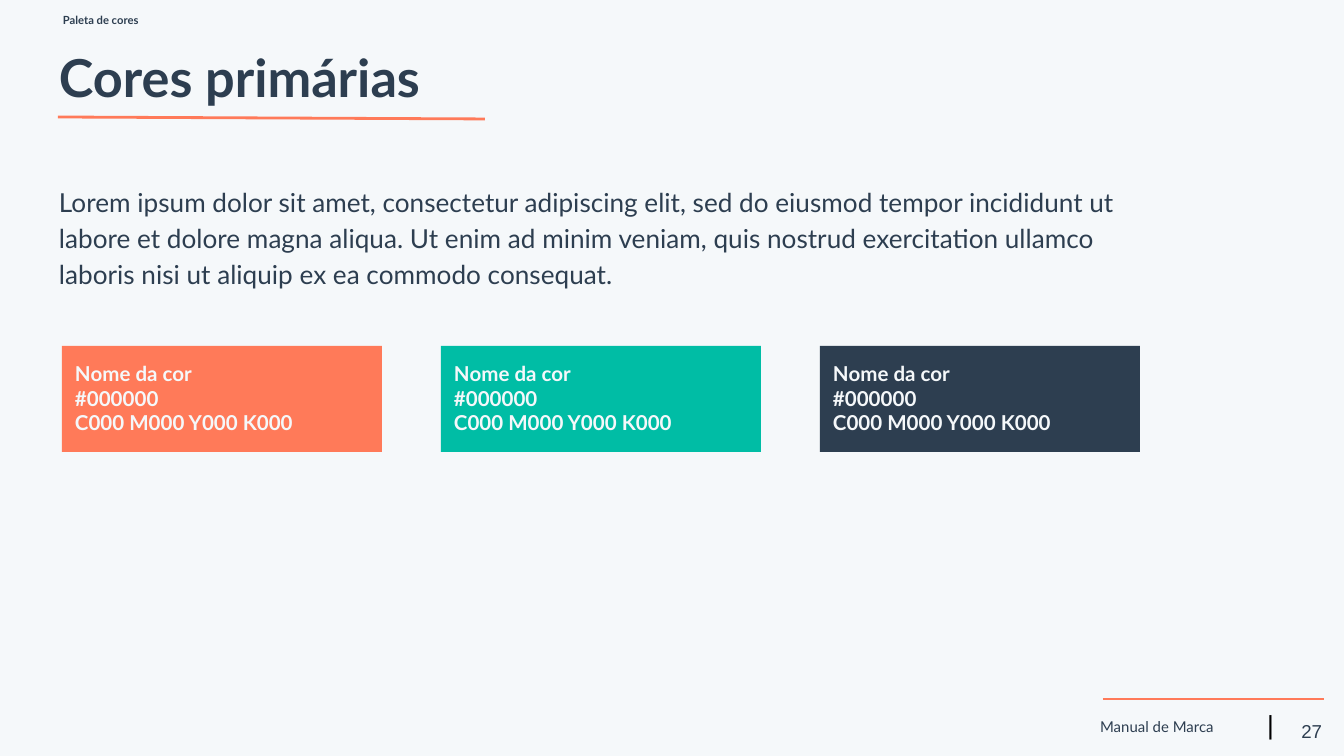
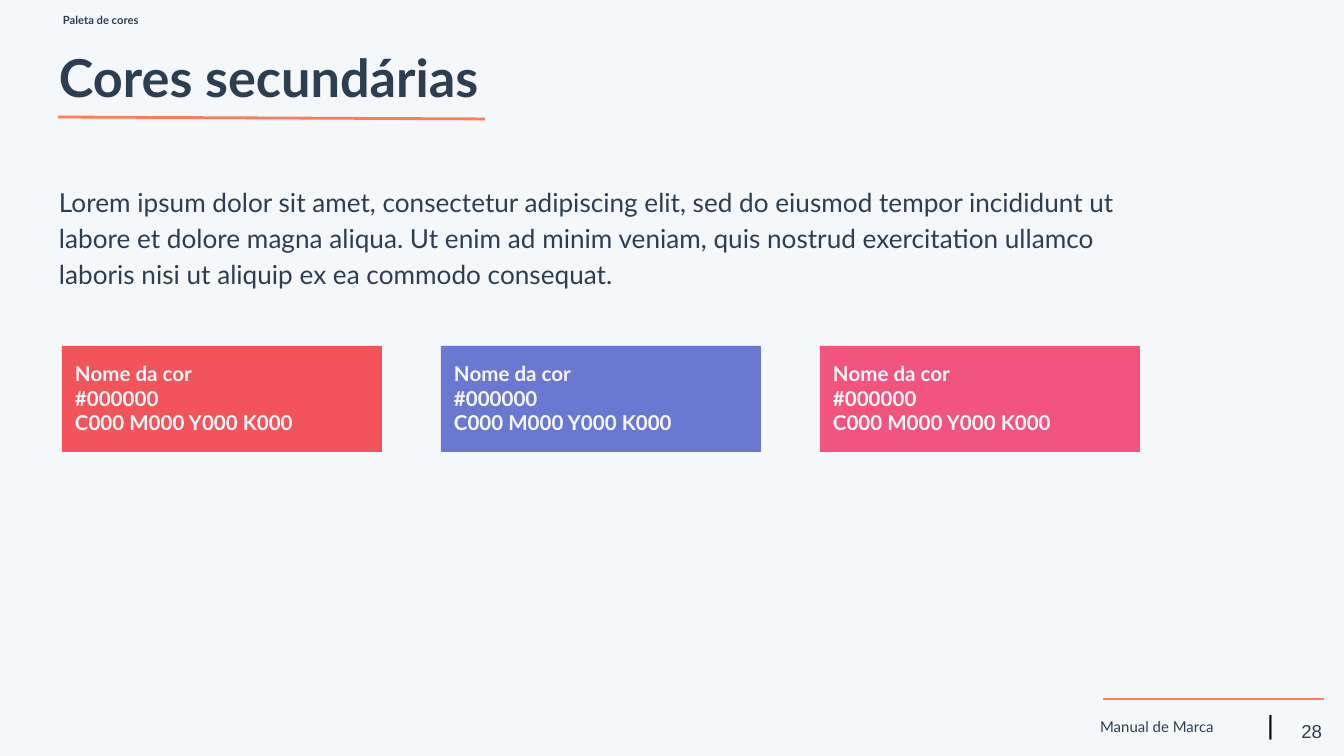
from pptx import Presentation
from pptx.dml.color import RGBColor
from pptx.enum.shapes import MSO_CONNECTOR, MSO_SHAPE
from pptx.enum.text import MSO_ANCHOR, MSO_AUTO_SIZE, PP_ALIGN
from pptx.oxml.ns import qn
from pptx.util import Pt
from lxml import etree

EMU_PER_INCH = 914400
PX_PER_INCH = 134.4

RECTANGLE = MSO_SHAPE.RECTANGLE
STRAIGHT = MSO_CONNECTOR.STRAIGHT
TOP, MIDDLE = MSO_ANCHOR.TOP, MSO_ANCHOR.MIDDLE
LEFT, RIGHT = PP_ALIGN.LEFT, PP_ALIGN.RIGHT
NO_AUTOFIT = MSO_AUTO_SIZE.NONE

PALE = RGBColor(0xF5, 0xF8, 0xFA)
NAVY = RGBColor(0x2D, 0x3E, 0x50)
ORANGE = RGBColor(0xFF, 0x7A, 0x59)
TEAL = RGBColor(0x00, 0xBD, 0xA5)
RED = RGBColor(0xF2, 0x54, 0x5B)
VIOLET = RGBColor(0x6A, 0x78, 0xD1)
PINK = RGBColor(0xF2, 0x54, 0x7D)
BLACK = RGBColor(0x00, 0x00, 0x00)

INSET = 13
TITLE_ONLY = 5

SECTION = "Paleta de cores"
MANUAL = "Manual de Marca"
INTRO = (
    "Lorem ipsum dolor sit amet, consectetur adipiscing elit, sed do eiusmod "
    "tempor incididunt ut labore et dolore magna aliqua. Ut enim ad minim "
    "veniam, quis nostrud exercitation ullamco laboris nisi ut aliquip ex ea "
    "commodo consequat."
)
SWATCH_LINES = ("Nome da cor", "#000000", "C000 M000 Y000 K000")
FIRST_PAGE = 27
PALETTES = [
    ("Cores primárias", (ORANGE, TEAL, NAVY)),
    ("Cores secundárias", (RED, VIOLET, PINK)),
]


def px(n):
    return round(n * EMU_PER_INCH / PX_PER_INCH)


def write(shape, *lines, size, color=NAVY, font="Lato", bold=False, align=LEFT,
          anchor=TOP, inset_top=INSET, line_spacing=None, space_after=None):
    """Fill a shape with one paragraph per line, all in one format."""
    tf = shape.text_frame
    tf.word_wrap = True
    tf.auto_size = NO_AUTOFIT
    tf.vertical_anchor = anchor
    tf.margin_left = tf.margin_right = tf.margin_bottom = px(INSET)
    tf.margin_top = px(inset_top)
    for i, line in enumerate(lines):
        p = tf.add_paragraph() if i else tf.paragraphs[0]
        p.alignment = align
        p.line_spacing = line_spacing
        p.space_after = space_after
        r = p.add_run()
        r.text = line
        r.font.name = font
        r.font.size = Pt(size)
        r.font.bold = bold
        r.font.color.rgb = color


def add_text(s, box, text, **fmt):
    write(s.shapes.add_textbox(*map(px, box)), text, **fmt)


def add_line(s, x1, y1, x2, y2, width):
    line = s.shapes.add_connector(STRAIGHT, px(x1), px(y1), px(x2), px(y2))
    line.line.color.rgb = ORANGE
    line.line.width = Pt(width)
    etree.SubElement(line._element.spPr, qn("a:effectLst"))


def add_header(s, title, x, y, w, h):
    """Section label, slide title and its slightly slanted underline."""
    add_line(s, x + 12, y + h, x + 439, y + h + 2, 1.5)
    sp = s.shapes.title
    sp.left, sp.top, sp.width, sp.height = map(px, (x, y, w, h))
    write(sp, title, size=28, bold=True)
    add_text(s, (x + 4, 0, 298, y), SECTION, size=6, bold=True)


def add_footer(s, page, x, y):
    """Rule, manual name, separator and page number."""
    add_line(s, x + 16, y, x + 237, y, 0.75)
    add_text(s, (x, y + 3, 204, 50), MANUAL, size=8, anchor=MIDDLE)
    add_text(s, (x + 167, y - 4, 39, 50), "|", size=14, font="Arial", color=BLACK)
    add_text(s, (x + 167, y + 3, 81, 58), str(page), size=10, font="Arial",
             align=RIGHT, anchor=MIDDLE)


def add_swatches(s, colors, x, y, w, h, gap):
    for i, color in enumerate(colors):
        left = x + i * (w + gap)
        sp = s.shapes.add_shape(RECTANGLE, px(left), px(y), px(w), px(h))
        sp.shadow.inherit = False
        sp.fill.solid()
        sp.fill.fore_color.rgb = color
        sp.line.fill.background()
        write(sp, *SWATCH_LINES, size=11, color=PALE, bold=True, inset_top=15)


def add_palette_slide(prs, page, title, colors):
    s = prs.slides.add_slide(prs.slide_layouts[TITLE_ONLY])
    add_header(s, title, 46, 32, 1253, 85)
    add_text(s, (46, 169, 1094, 130), INTRO, size=14,
             line_spacing=1.15, space_after=Pt(16))
    add_swatches(s, colors, 62, 346, 320, 106, gap=59)
    add_footer(s, page, 1087, 699)


def main():
    prs = Presentation()
    prs.slide_width, prs.slide_height = px(1344), px(756)
    background = prs.slide_master.background.fill
    background.solid()
    background.fore_color.rgb = PALE
    for page, (title, colors) in enumerate(PALETTES, FIRST_PAGE):
        add_palette_slide(prs, page, title, colors)
    prs.save("out.pptx")


if __name__ == "__main__":
    main()
